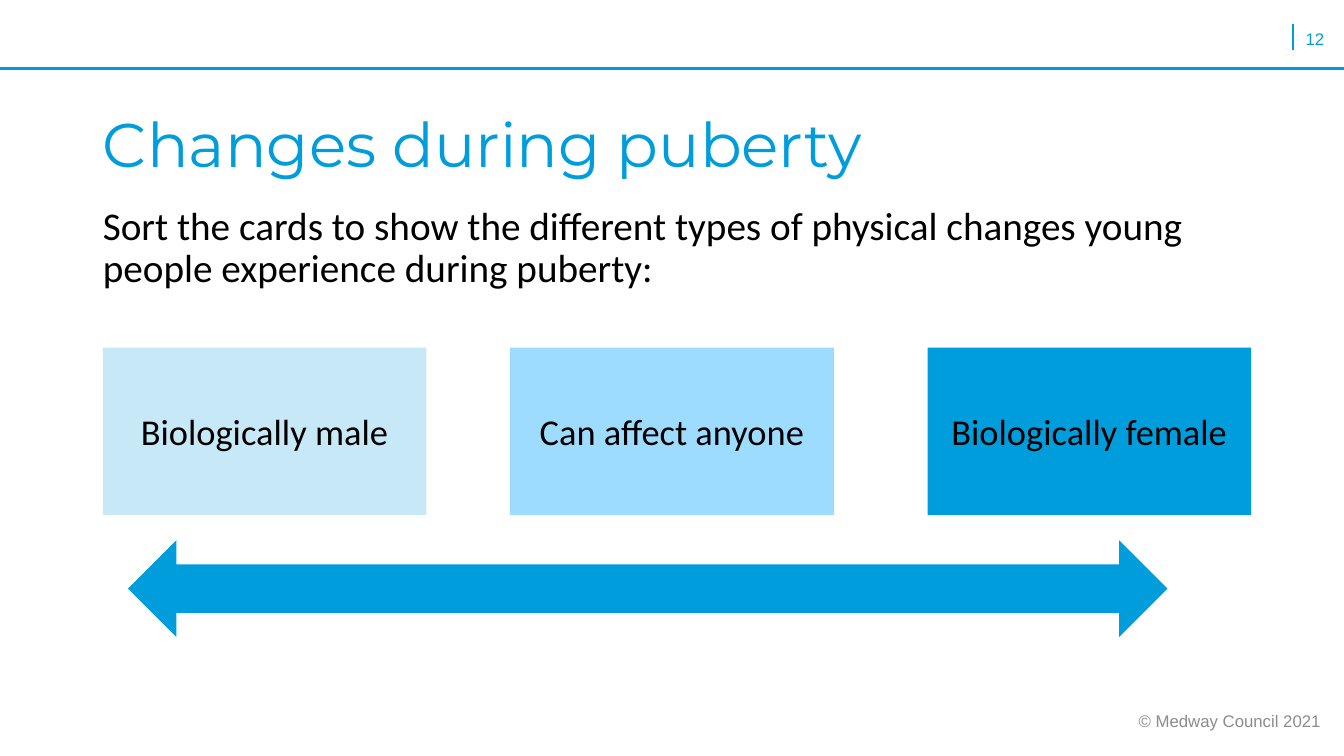
from lxml import etree
from pptx import Presentation
from pptx import util as u
from pptx.dml.color import RGBColor
from pptx.enum import shapes, text
from pptx.oxml import ns

BLUE = "009DDC"
BLACK = "000000"


def color(value):
    return RGBColor.from_string(value)


def write(sp, words, size, font, value, align, anchor):
    tf = sp.text_frame
    tf.word_wrap = True
    tf.auto_size = text.MSO_AUTO_SIZE.NONE
    tf.vertical_anchor = anchor
    p = tf.paragraphs[0]
    p.alignment = align
    p.space_before = u.Pt(0)
    r = p.add_run()
    r.text = words
    r.font.size = u.Pt(size)
    r.font.name = font
    r.font.color.rgb = color(value)
    return p


LEFT, CENTER, RIGHT = text.PP_ALIGN.LEFT, text.PP_ALIGN.CENTER, text.PP_ALIGN.RIGHT
TOP, MIDDLE = text.MSO_ANCHOR.TOP, text.MSO_ANCHOR.MIDDLE

prs = Presentation()
prs.slide_width = u.Inches(13.33)
prs.slide_height = u.Inches(7.5)
s = prs.slides.add_slide(prs.slide_layouts[1])

for x1, y1, x2, y2, width in [
    (12.82, 0.24, 12.82, 0.5, 1.5),
    (0, 0.68, 13.33, 0.68, 2.25),
]:
    rule = s.shapes.add_connector(
        shapes.MSO_CONNECTOR.STRAIGHT, *[u.Inches(v) for v in (x1, y1, x2, y2)]
    )
    rule.line.color.rgb = color(BLUE)
    rule.line.width = u.Pt(width)
    etree.SubElement(rule._element.spPr, ns.qn("a:effectLst"))

title, body = s.shapes.title, s.placeholders[1]
for sp, top, height, words, size, font, value in [
    (title, 1.08, 1.45, "Changes during puberty", 44, "Montserrat", BLUE),
    (body, 2, 3.36, "Sort the cards to show the different types of physical changes "
     "young people experience during puberty:", 28, "Calibri", BLACK),
]:
    sp.left, sp.top = u.Inches(0.92), u.Inches(top)
    sp.width, sp.height = u.Inches(11.5), u.Inches(height)
    p = write(sp, words, size, font, value, LEFT, TOP)
    p.line_spacing = 0.9
    pPr = p._p.get_or_add_pPr()
    pPr.set("marL", "0")
    pPr.set("indent", "0")
    etree.SubElement(pPr, ns.qn("a:buNone"))

for x, y, w, h, words, value, align, anchor in [
    (12.85, 0.24, 0.42, 0.26, "12", BLUE, LEFT, TOP),
    (10.86, 6.95, 2.34, 0.4, "© Medway Council 2021", "8C8C8C", RIGHT, MIDDLE),
]:
    sp = s.shapes.add_textbox(*[u.Inches(v) for v in (x, y, w, h)])
    write(sp, words, 12, "Arial", value, align, anchor)

for x, words, fill in [
    (1.02, "Biologically male", "C7E9F7"),
    (5.06, "Can affect anyone", "9DDCFF"),
    (9.2, "Biologically female", BLUE),
]:
    card = s.shapes.add_shape(
        shapes.MSO_SHAPE.RECTANGLE, *[u.Inches(v) for v in (x, 3.45, 3.21, 1.66)]
    )
    card.shadow.inherit = False
    card.fill.solid()
    card.fill.fore_color.rgb = color(fill)
    card.line.fill.background()
    write(card, words, 26, "Calibri", BLACK, CENTER, MIDDLE)

arrow = s.shapes.add_shape(
    shapes.MSO_SHAPE.LEFT_RIGHT_ARROW, *[u.Inches(v) for v in (1.27, 5.36, 10.31, 0.96)]
)
arrow.shadow.inherit = False
arrow.fill.solid()
arrow.fill.fore_color.rgb = color(BLUE)
arrow.line.fill.background()

prs.save("out.pptx")
